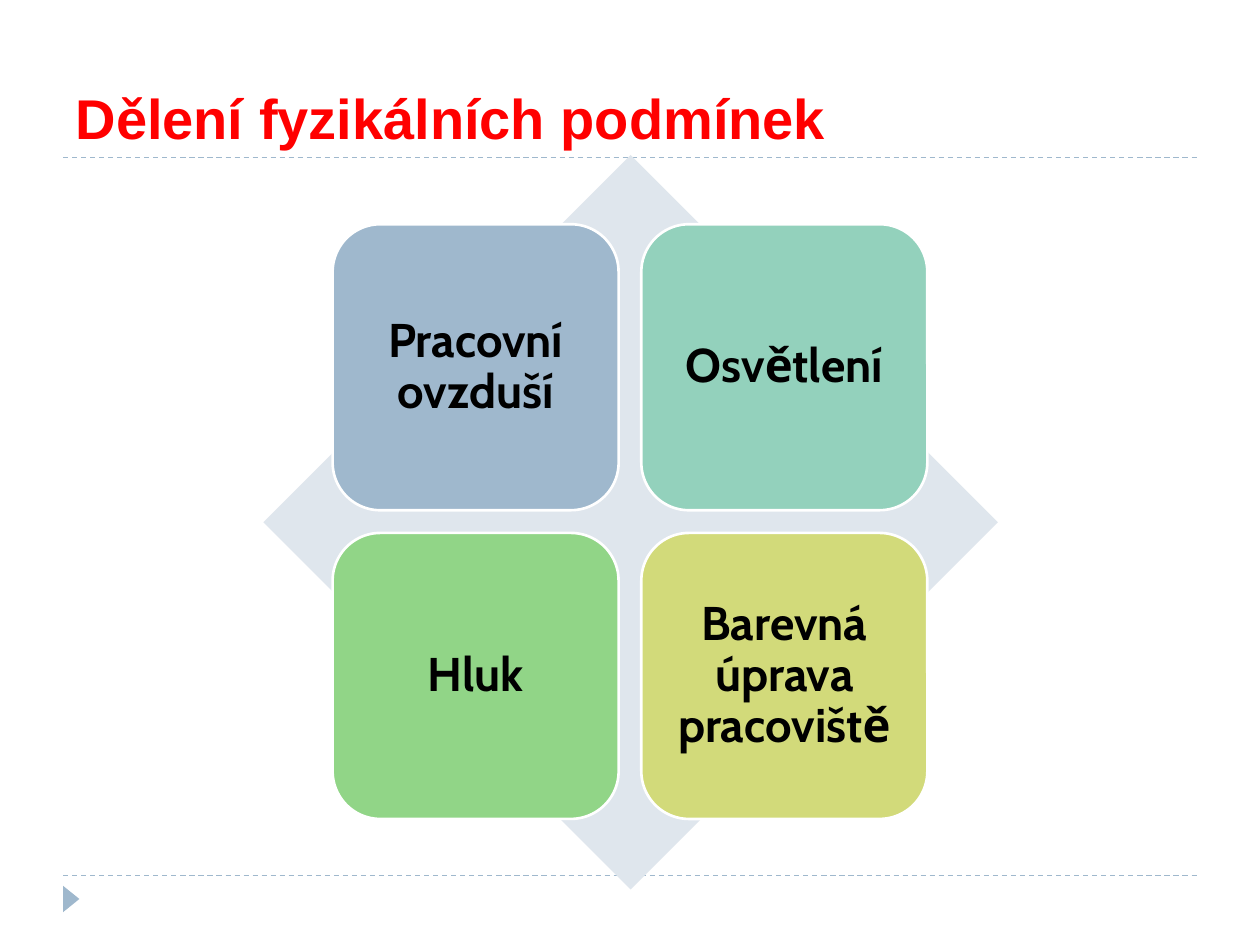
"""Build the slide on the division of physical conditions."""
from lxml.etree import SubElement
from pptx import Presentation
from pptx.dml.color import RGBColor
from pptx.enum.dml import MSO_LINE
from pptx.enum.shapes import MSO_CONNECTOR, MSO_SHAPE
from pptx.enum.text import MSO_ANCHOR, PP_ALIGN
from pptx.oxml.ns import qn
from pptx.util import Inches, Pt

THEME = {
    "title": {"name": "Arial", "size": Pt(32), "bold": True},
    "label": {"name": "Cabin", "size": Pt(27), "bold": True},
    "red": RGBColor.from_string("FF0000"),
    "black": RGBColor.from_string("000000"),
    "white": RGBColor.from_string("FFFFFF"),
    "blue": RGBColor.from_string("9FB8CD"),
    "pale": RGBColor.from_string("DFE6ED"),
    "teal": RGBColor.from_string("93D1BC"),
    "green": RGBColor.from_string("91D587"),
    "lime": RGBColor.from_string("D2DA7A"),
}


def style(item, values):
    for name, value in values.items():
        setattr(item, name, value)


def draw(kind, left, top, width, height, color):
    shape = slide.shapes.add_shape(
        kind, Inches(left), Inches(top), Inches(width), Inches(height))
    shape.shadow.inherit = False
    shape.fill.solid()
    shape.fill.fore_color.rgb = THEME[color]
    shape.line.fill.background()
    return shape


deck = Presentation()
style(deck, {"slide_width": Inches(10), "slide_height": Inches(7.5)})
slide = deck.slides.add_slide(deck.slide_layouts[5])

for y in (6.95, 1.25):
    rule = slide.shapes.add_connector(
        MSO_CONNECTOR.STRAIGHT, Inches(0.5), Inches(y), Inches(9.5), Inches(y))
    rule.line.color.rgb = THEME["blue"]
    style(rule.line, {"width": Pt(0.75), "dash_style": MSO_LINE.DASH})
    SubElement(rule.element.spPr, qn("a:effectLst"))

mark = draw(MSO_SHAPE.ISOSCELES_TRIANGLE, 0.46, 7.07, 0.21, 0.13, "blue")
mark.rotation = 90

title = slide.shapes.title
style(title, {"left": Inches(0.5), "top": Inches(0.17),
              "width": Inches(9), "height": Inches(1.08)})
title.text_frame.text = "Dělení fyzikálních podmínek"
title.text_frame.vertical_anchor = MSO_ANCHOR.BOTTOM
head = title.text_frame.paragraphs[0]
head.alignment = PP_ALIGN.LEFT
style(head.runs[0].font, THEME["title"])
head.runs[0].font.color.rgb = THEME["red"]

draw(MSO_SHAPE.DIAMOND, 2.09, 1.23, 5.83, 5.83, "pale")

tiles = [
    ("Pracovní ovzduší", "blue"),
    ("Osvětlení", "teal"),
    ("Hluk", "green"),
    ("Barevná úprava pracoviště", "lime"),
]
side, step = 2.27, 2.45
for index, (label, color) in enumerate(tiles):
    row, col = divmod(index, 2)
    tile = draw(MSO_SHAPE.ROUNDED_RECTANGLE, 2.64 + col * step,
                1.78 + row * step, side, side, color)
    tile.line.color.rgb = THEME["white"]
    tile.line.width = Pt(1.5)
    frame = tile.text_frame
    frame.text = label
    style(frame, {"word_wrap": True, "vertical_anchor": MSO_ANCHOR.MIDDLE,
                  "margin_left": 0, "margin_right": 0,
                  "margin_top": 0, "margin_bottom": 0})
    para = frame.paragraphs[0]
    style(para, {"alignment": PP_ALIGN.CENTER, "line_spacing": 0.9})
    style(para.runs[0].font, THEME["label"])
    para.runs[0].font.color.rgb = THEME["black"]

deck.save("out.pptx")
